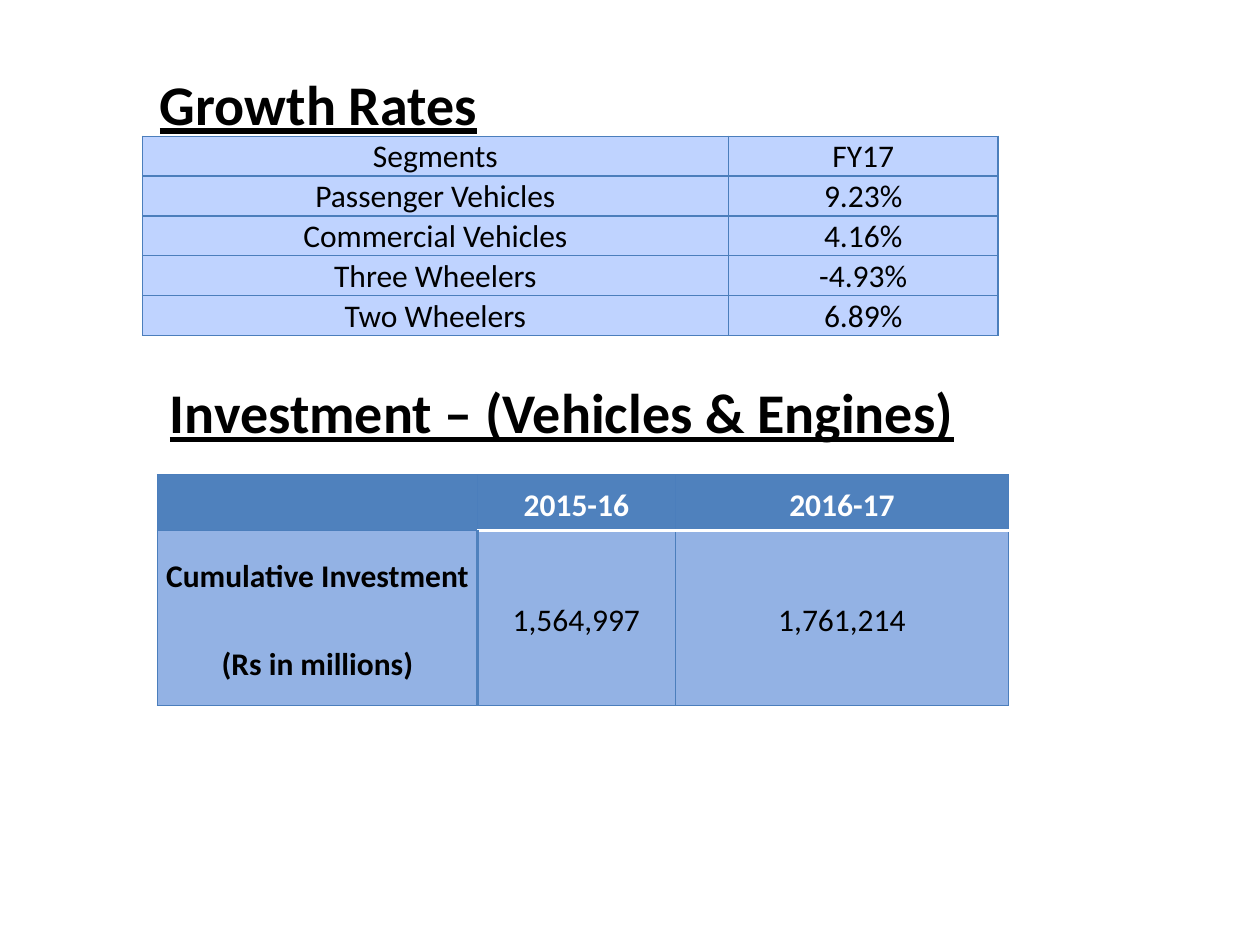
import pptx
import pptx.dml.color
import pptx.enum.text
import pptx.oxml
import pptx.oxml.ns
import pptx.util

Pt = pptx.util.Pt
RGBColor = pptx.dml.color.RGBColor
ALIGN = pptx.enum.text.PP_ALIGN
ANCHOR = pptx.enum.text.MSO_ANCHOR

BLACK = RGBColor(0x00, 0x00, 0x00)
WHITE = RGBColor(0xFF, 0xFF, 0xFF)
GRID = RGBColor(0x4B, 0x7E, 0xBC)
HEADER_BLUE = RGBColor(0x4F, 0x81, 0xBD)
PALE_BLUE = RGBColor(0xBF, 0xD3, 0xFF)
BODY_BLUE = RGBColor(0x93, 0xB2, 0xE4)


def format_text(paragraph, color, **font_values):
    """Apply the slide's font, a colour and further font values to a paragraph."""
    for attribute, value in {"name": "Calibri", **font_values}.items():
        setattr(paragraph.font, attribute, value)
    paragraph.font.color.rgb = color


def format_cell(cell, text, color, bold, fill, margins, spacing, edges):
    """Fill a cell; edges maps L, R, T and B to (colour, width in points)."""
    cell.text_frame.paragraphs[0].text = text
    cell.vertical_anchor = ANCHOR.MIDDLE
    for side, margin in zip(("left", "right", "top", "bottom"), margins):
        setattr(cell, f"margin_{side}", Pt(margin))
    paragraph = cell.text_frame.paragraphs[0]
    paragraph.alignment = ALIGN.CENTER
    paragraph.line_spacing = spacing
    format_text(paragraph, color, size=Pt(18), bold=bold)
    cell.fill.solid()
    cell.fill.fore_color.rgb = fill
    properties = cell._tc.get_or_add_tcPr()
    for position, side in enumerate("LRTB"):
        edge_color, width = edges.get(side, (GRID, 0.75))
        properties.insert(position, pptx.oxml.parse_xml(
            f'<a:ln{side} {pptx.oxml.ns.nsdecls("a")} w="{int(Pt(width))}">'
            f'<a:solidFill><a:srgbClr val="{edge_color}"/></a:solidFill></a:ln{side}>'))


presentation = pptx.Presentation()
presentation.slide_width, presentation.slide_height = Pt(720), Pt(540)
slide = presentation.slides.add_slide(presentation.slide_layouts[5])

# Growth rates table
growth_rows = [
    ("Segments", "FY17"),
    ("Passenger Vehicles", "9.23%"),
    ("Commercial Vehicles", "4.16%"),
    ("Three Wheelers", "-4.93%"),
    ("Two Wheelers", "6.89%"),
]
growth = slide.shapes.add_table(
    len(growth_rows), 2, Pt(81.4), Pt(77.8), Pt(488.9), Pt(114)).table
growth.first_row = growth.horz_banding = False
for column, width in zip(growth.columns, (334.8, 154.1)):
    column.width = Pt(width)
for r, row_texts in enumerate(growth_rows):
    growth.rows[r].height = Pt(22.8)
    for c, text in enumerate(row_texts):
        format_cell(growth.cell(r, c), text, BLACK, False, PALE_BLUE,
                    (0.7, 0.7, 0.7, 0), 1.0, {})

# Investment table
investment_rows = [
    ("", "2015-16", "2016-17"),
    ("Cumulative Investment \n(Rs in millions)", " 1,564,997 ", "1,761,214"),
]
investment = slide.shapes.add_table(
    2, 3, Pt(90), Pt(271.4), Pt(486.4), Pt(131.8)).table
investment.first_row = investment.horz_banding = False
for column, width in zip(investment.columns, (182.9, 113, 190.5)):
    column.width = Pt(width)
for row, height in zip(investment.rows, (31.7, 100.1)):
    row.height = Pt(height)
for r, row_texts in enumerate(investment_rows):
    is_header = r == 0
    for c, text in enumerate(row_texts):
        edges = {}
        if c > 0:  # white rule between the years and their values
            edges["B" if is_header else "T"] = (WHITE, 2)
        if not is_header and c < 2:  # heavier rule beside the row label
            edges["R" if c == 0 else "L"] = (HEADER_BLUE, 2)
        format_cell(investment.cell(r, c), text,
                    WHITE if is_header else BLACK, is_header or c == 0,
                    HEADER_BLUE if is_header else BODY_BLUE,
                    (5, 5, 0, 0), 1.15, edges)

# Headings
growth_heading = slide.shapes.title
investment_heading = slide.shapes.add_textbox(0, 0, 0, 0)
for heading, text, left, top, width in (
    (growth_heading, "Growth Rates", 84.2, 36, 197.3),
    (investment_heading, "Investment – (Vehicles & Engines)", 90, 212.4, 466.6),
):
    bounds = {"left": left, "top": top, "width": width, "height": 46}
    for attribute, value in bounds.items():
        setattr(heading, attribute, Pt(value))
    frame = heading.text_frame
    frame.text = text
    frame_values = {
        "word_wrap": False,
        "auto_size": pptx.enum.text.MSO_AUTO_SIZE.SHAPE_TO_FIT_TEXT,
        "vertical_anchor": ANCHOR.TOP,
    }
    for attribute, value in frame_values.items():
        setattr(frame, attribute, value)
    frame.paragraphs[0].alignment = ALIGN.LEFT
    format_text(frame.paragraphs[0], BLACK, size=Pt(32), bold=True, underline=True)

presentation.save("out.pptx")
